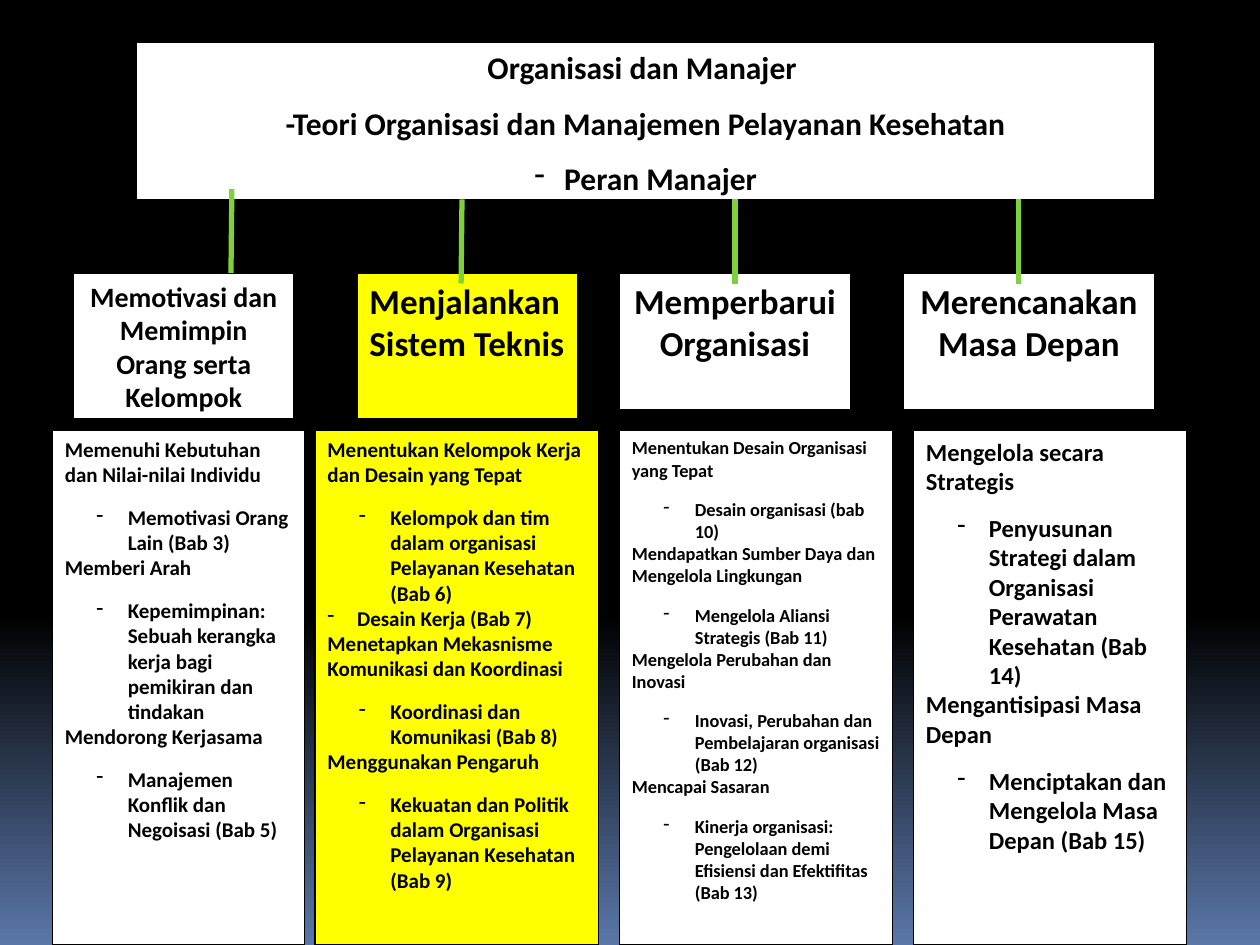
import copy
from dataclasses import dataclass

import pptx
import pptx.dml.color
import pptx.enum.shapes
import pptx.enum.text
import pptx.oxml
import pptx.oxml.ns
import pptx.util

Pt = pptx.util.Pt
LEFT = pptx.enum.text.PP_ALIGN.LEFT
CENTER = pptx.enum.text.PP_ALIGN.CENTER
BLACK, WHITE, YELLOW, GREEN = "000000", "FFFFFF", "FFFF00", "7FD13B"
HEADER_TOP, COLUMN_TOP, COLUMN_HEIGHT = 156, 246, 294
LINE_DROP = 48


@dataclass
class Line:
    text: str


@dataclass
class Heading(Line):
    """A paragraph without a dash, followed by a gap."""
    level: int = 0
    margin: float = 0
    hanging: float = 0
    after: float = 10


@dataclass
class Item(Line):
    """A dashed paragraph with its text at the margin."""
    level: int = 0
    margin: float = 17
    hanging: float = 17
    after: float = 0


@dataclass
class SubItem(Item):
    level: int = 1
    margin: float = 36
    hanging: float = 18


@dataclass
class Box:
    left: float
    top: float
    width: float
    height: float
    size: float
    lines: list[Line]
    align: int = LEFT
    fill: str = WHITE


@dataclass
class Stem:
    start_x: float
    start_y: float
    end_x: float


def header(left: float, width: float, height: float, size: float, text: str,
           align: int = CENTER, fill: str = WHITE) -> Box:
    return Box(left, HEADER_TOP, width, height, size, [Heading(text)], align, fill)


def column(left: float, width: float, size: float, lines: list[Line],
           fill: str = WHITE) -> Box:
    return Box(left, COLUMN_TOP, width, COLUMN_HEIGHT, size, lines, LEFT, fill)


BOXES = [
    Box(78, 24, 582, 90, 18, [
        Heading("Organisasi dan Manajer "),
        Heading("-Teori Organisasi dan Manajemen Pelayanan Kesehatan"),
        Item("Peran Manajer"),
    ], CENTER),
    header(42, 126, 83.5, 16, "Memotivasi dan Memimpin Orang serta Kelompok"),
    header(204, 126, 83.5, 20, "Menjalankan Sistem Teknis", LEFT, YELLOW),
    header(354, 132, 78, 20, "Memperbarui Organisasi"),
    header(516, 144, 78, 20, "Merencanakan Masa Depan"),
    column(30, 144, 12, [
        Heading("Memenuhi Kebutuhan dan Nilai-nilai Individu"),
        SubItem("Memotivasi Orang Lain (Bab 3)"),
        Heading("Memberi Arah"),
        SubItem("Kepemimpinan: Sebuah kerangka kerja bagi pemikiran dan tindakan"),
        Heading("Mendorong Kerjasama"),
        SubItem("Manajemen Konflik dan Negoisasi (Bab 5)"),
    ]),
    column(180, 162, 12, [
        Heading("Menentukan Kelompok Kerja dan Desain yang Tepat"),
        SubItem("Kelompok dan tim dalam organisasi Pelayanan Kesehatan (Bab 6)"),
        Item("Desain Kerja (Bab 7)"),
        Heading("Menetapkan Mekasnisme Komunikasi dan Koordinasi"),
        SubItem("Koordinasi dan Komunikasi (Bab 8)"),
        Heading("Menggunakan Pengaruh"),
        SubItem("Kekuatan dan Politik dalam Organisasi Pelayanan Kesehatan (Bab 9)"),
    ], YELLOW),
    column(354, 156, 10.5, [
        Heading("Menentukan Desain Organisasi yang Tepat"),
        SubItem("Desain organisasi (bab 10)"),
        Heading("Mendapatkan Sumber Daya dan Mengelola Lingkungan"),
        SubItem("Mengelola Aliansi Strategis (Bab 11)"),
        Heading("Mengelola Perubahan dan Inovasi"),
        SubItem("Inovasi, Perubahan dan Pembelajaran organisasi (Bab 12)"),
        Heading("Mencapai Sasaran"),
        SubItem("Kinerja organisasi: Pengelolaan demi Efisiensi dan Efektifitas (Bab 13)"),
    ]),
    column(522, 156, 14, [
        Heading("Mengelola secara Strategis"),
        SubItem("Penyusunan Strategi dalam Organisasi Perawatan Kesehatan (Bab 14)"),
        Heading("Mengantisipasi Masa Depan"),
        SubItem("Menciptakan dan Mengelola Masa Depan (Bab 15)"),
    ]),
]
STEMS = [Stem(132.5, 108, 132), Stem(264, 114, 263.5),
         Stem(420, 114, 420), Stem(582, 114, 582)]


def color(value: str) -> pptx.dml.color.RGBColor:
    return pptx.dml.color.RGBColor.from_string(value)


def apply(target, formats: dict) -> None:
    """Set each named attribute of the target."""
    for name, value in formats.items():
        setattr(target, name, value)


def paint_background(slide) -> None:
    fill = slide.background.fill
    fill.gradient()
    fill.gradient_angle = 270
    stops = slide.element.xpath(".//a:gsLst")[0]
    stops.append(copy.deepcopy(stops[0]))
    shades = [(0, BLACK), (0.65, BLACK), (1, "5A77A9")]
    for stop, (position, shade) in zip(fill.gradient_stops, shades):
        stop.position = position
        stop.color.rgb = color(shade)


def write_line(para, line: Line, box: Box) -> None:
    apply(para, {"alignment": box.align, "level": line.level,
                 "space_before": Pt(0), "space_after": Pt(line.after)})
    properties = para._p.get_or_add_pPr()
    properties.set("marL", str(Pt(line.margin)))
    properties.set("indent", str(-Pt(line.hanging)))
    if line.hanging:
        bullet = pptx.oxml.parse_xml(
            f'<a:buChar {pptx.oxml.ns.nsdecls("a")} char="-"/>')
        properties.append(bullet)
    span = para.add_run()
    span.text = line.text
    apply(span.font, {"name": "Calibri", "size": Pt(box.size), "bold": True})
    span.font.color.rgb = color(BLACK)


def draw_box(slide, box: Box) -> None:
    shape = slide.shapes.add_shape(
        pptx.enum.shapes.MSO_SHAPE.RECTANGLE,
        Pt(box.left), Pt(box.top), Pt(box.width), Pt(box.height))
    shape.shadow.inherit = False
    shape.fill.solid()
    shape.fill.fore_color.rgb = color(box.fill)
    shape.line.color.rgb = color(BLACK)
    shape.line.width = Pt(0.75)
    frame = shape.text_frame
    apply(frame, {"word_wrap": True,
                  "vertical_anchor": pptx.enum.text.MSO_ANCHOR.TOP})
    for index, line in enumerate(box.lines):
        para = frame.add_paragraph() if index else frame.paragraphs[0]
        write_line(para, line, box)


def draw_stem(slide, stem: Stem) -> None:
    connector = slide.shapes.add_connector(
        pptx.enum.shapes.MSO_CONNECTOR.STRAIGHT,
        Pt(stem.start_x), Pt(stem.start_y),
        Pt(stem.end_x), Pt(stem.start_y + LINE_DROP))
    connector.line.color.rgb = color(GREEN)
    connector.line.width = Pt(3)
    connector.element.spPr.append(pptx.oxml.parse_xml(
        f'<a:effectLst {pptx.oxml.ns.nsdecls("a")}/>'))


def main() -> None:
    deck = pptx.Presentation()
    apply(deck, {"slide_width": Pt(720), "slide_height": Pt(540)})
    slide = deck.slides.add_slide(deck.slide_layouts[6])
    paint_background(slide)
    for box in BOXES:
        draw_box(slide, box)
    for stem in STEMS:
        draw_stem(slide, stem)
    deck.save("out.pptx")


if __name__ == "__main__":
    main()
